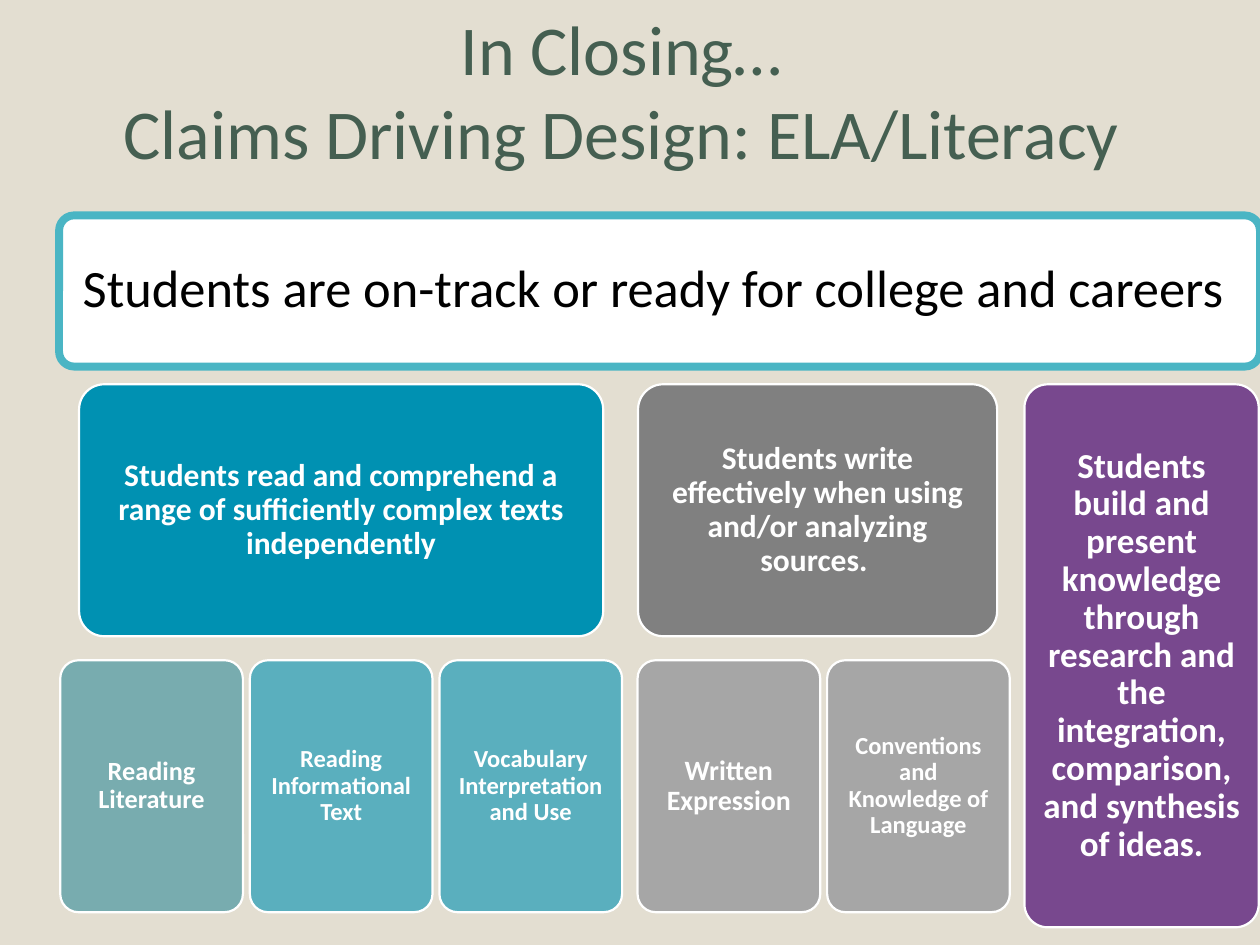
from pptx import Presentation
from pptx.util import Pt
from pptx.dml.color import RGBColor
from pptx.enum.shapes import MSO_SHAPE
from pptx.enum.text import MSO_ANCHOR, PP_ALIGN
from pptx.oxml import parse_xml
from pptx.oxml.ns import nsdecls, qn
from lxml.etree import SubElement

TOP, LOW = 219.6, 377.3
HIGH, WIDE = 144, 104.4
STEP = 108.35
LEFT, MID = 34.4, 364.3


def paint(item, color):
    item.solid()
    item.fore_color.rgb = RGBColor.from_string(color)


def style(frame, text, size, color, bold=False, inset=3.6):
    frame.word_wrap = True
    frame.vertical_anchor = MSO_ANCHOR.MIDDLE
    frame.margin_left = frame.margin_right = Pt(inset)
    frame.margin_top = frame.margin_bottom = Pt(inset)
    para = frame.paragraphs[0]
    para.text = text
    para.alignment = PP_ALIGN.CENTER
    font = para.font
    font.name, font.size, font.bold = "Calibri", Pt(size), bold
    paint(font.fill, color)
    return para


def title(slide, text):
    box = slide.shapes.add_textbox(Pt(20.2), Pt(15.1), Pt(659.5), Pt(72))
    para = style(box.text_frame, text, 40, "455F51")
    box.text_frame.margin_left = Pt(17.3)
    box.text_frame.margin_right = Pt(7.2)
    for run in para.runs:
        run.font._element.append(parse_xml(
            f'<a:effectLst {nsdecls("a")}>'
            '<a:outerShdw blurRad="50800" dist="38100" dir="2700000">'
            '<a:srgbClr val="000000"><a:alpha val="40000"/></a:srgbClr>'
            '</a:outerShdw></a:effectLst>'))


def card(slide, area, text, size, fill, ink="FFFFFF", line="FFFFFF",
         width=1.25, bold=True, inset=4.5, alpha=None):
    shape = slide.shapes.add_shape(
        MSO_SHAPE.ROUNDED_RECTANGLE, *[Pt(n) for n in area])
    shape.shadow.inherit = False
    shape.adjustments[0] = 0.1
    paint(shape.fill, fill)
    if alpha:
        tone = shape.fill._xPr.find(qn("a:solidFill"))[0]
        SubElement(tone, qn("a:alpha")).set("val", str(alpha * 1000))
    paint(shape.line.fill, line)
    shape.line.width = Pt(width)
    para = style(shape.text_frame, text, size, ink, bold, inset)
    para.line_spacing = 0.9


def row(slide, left, cards):
    for i, (text, size, fill, alpha) in enumerate(cards):
        card(slide, (left + i * STEP, LOW, WIDE, HIGH), text, size, fill,
             alpha=alpha)


def main():
    deck = Presentation()
    deck.slide_width, deck.slide_height = Pt(720), Pt(540)
    slide = deck.slides.add_slide(deck.slide_layouts[6])
    paint(slide.background.fill, "E3DED1")

    title(slide, "In Closing…\vClaims Driving Design: ELA/Literacy")
    card(slide, (33.8, 123.1, 686.2, 86.4),
         "Students are on-track or ready for college and careers ", 30,
         "FFFFFF", ink="000000", line="4AB5C4", width=4.5, bold=False,
         inset=8.6)
    card(slide, (45.2, TOP, 299.5, HIGH),
         "Students read and comprehend a range of sufficiently complex "
         "texts independently", 18, "0091B2", inset=5)
    row(slide, LEFT, [
        ("Reading Literature", 15, "328C99", 60),
        ("Reading Informational Text", 14, "0091B2", 60),
        ("Vocabulary Interpretation and Use", 14, "0091B2", 60)])
    card(slide, (364.6, TOP, 205.2, HIGH),
         "Students write effectively when using and/or analyzing sources. ",
         18, "808080", inset=5)
    row(slide, MID, [
        ("Written Expression", 16, "A6A6A6", None),
        ("Conventions and Knowledge of Language", 14, "A6A6A6", None)])
    card(slide, (585.4, TOP, 133.9, 310.3),
         "Students build and present knowledge through research and the "
         "integration, comparison, and synthesis of ideas.", 20, "78488E",
         inset=5.8)
    deck.save("out.pptx")


if __name__ == "__main__":
    main()
